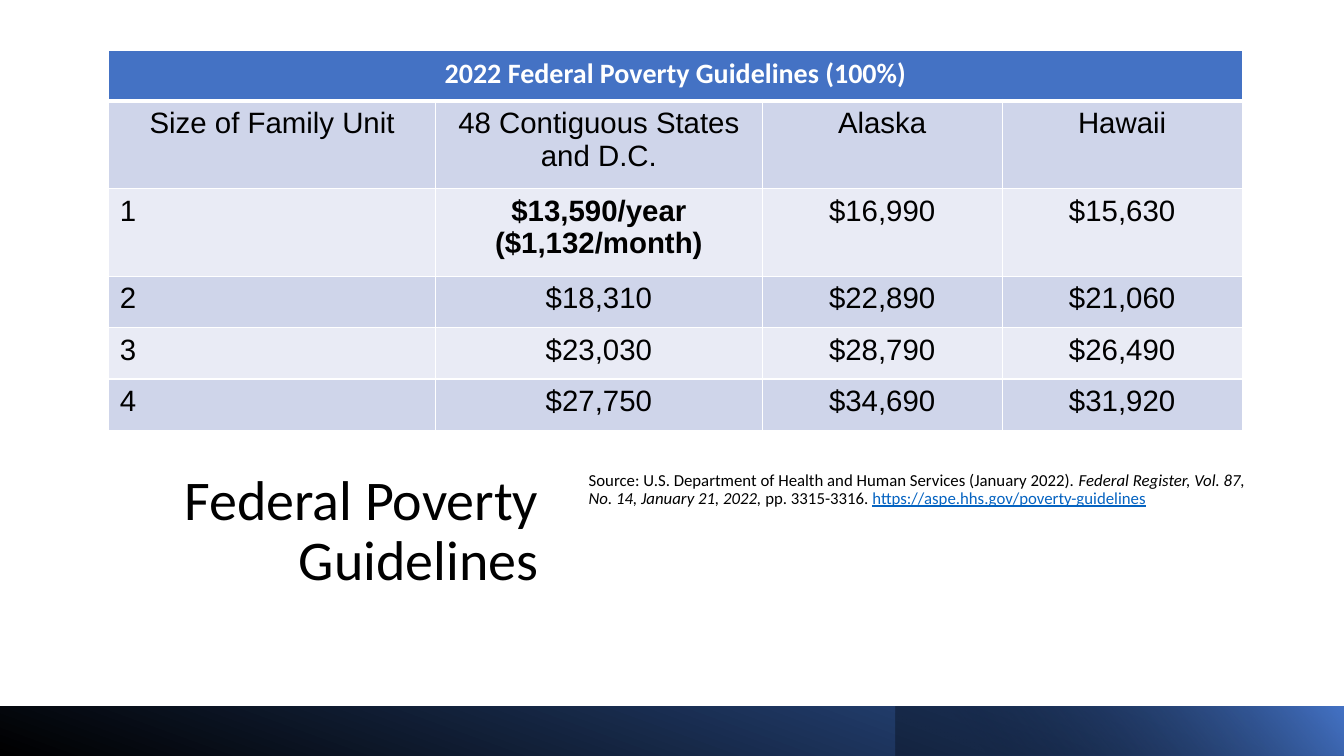
from pptx import Presentation
from pptx.util import Inches, Pt
from pptx.dml.color import RGBColor
from pptx.enum import shapes, text
from pptx.oxml import parse_xml
from pptx.oxml.ns import nsdecls, qn
from lxml import etree


def rgb(value):
    return RGBColor.from_string(value)


def style(p, size, font, color, align=text.PP_ALIGN.LEFT, bold=False):
    p.alignment = align
    p.font.size, p.font.name, p.font.bold = Pt(size), font, bold
    p.font.color.rgb = rgb(color)


prs = Presentation()
prs.slide_width, prs.slide_height = Inches(13.33), Inches(7.5)
s = prs.slides.add_slide(prs.slide_layouts[5])

# Title
title = s.shapes.title
title.left, title.top = Inches(0.9), Inches(4.63)
title.width, title.height = Inches(4.54), Inches(1.97)
tf = title.text_frame
tf.text = "Federal Poverty Guidelines"
tf.word_wrap = True
tf.vertical_anchor = text.MSO_ANCHOR.TOP
p = tf.paragraphs[0]
style(p, 40, "Calibri", "000000", text.PP_ALIGN.RIGHT)
p.line_spacing = 0.9

# Source note
tf = s.shapes.add_textbox(Inches(5.74), Inches(4.63), Inches(6.82), Inches(1.97)).text_frame
tf.word_wrap = True
p = tf.paragraphs[0]
style(p, 12, "Calibri", "000000")
p.line_spacing, p.space_after = 0.9, Pt(6)
for part, italic in [
    ("Source: U.S. Department of Health and Human Services (January 2022). ", False),
    ("Federal Register, Vol. 87, No. 14, January 21, 2022, ", True),
    ("pp. 3315-3316. ", False),
    ("https://aspe.hhs.gov/poverty-guidelines", False),
]:
    r = p.add_run()
    r.text, r.font.italic = part, italic
r.font.underline = True
r.font.color.rgb = rgb("0563C1")

# Bottom gradient bands: left, width, angle, stops (position, colour, opacity %)
for left, width, angle, stops in [
    (0, 13.33, 70, [(0, "000000", 100), (1, "2F5597", 100)]),
    (8.88, 4.45, 40, [(0.19, "000000", 31), (0.99, "4472C4", 100)]),
]:
    sp = s.shapes.add_shape(shapes.MSO_SHAPE.RECTANGLE,
                            Inches(left), Inches(7.01), Inches(width), Inches(0.49))
    sp.shadow.inherit = False
    sp.line.fill.background()
    sp.fill.gradient()
    sp.fill.gradient_angle = angle
    for stop, (position, color, opacity) in zip(sp.fill.gradient_stops, stops):
        stop.position = position
        stop.color.rgb = rgb(color)
    for clr, (position, color, opacity) in zip(sp._element.spPr.iter(qn("a:srgbClr")), stops):
        if opacity < 100:
            etree.SubElement(clr, qn("a:alpha"), val=str(opacity * 1000))

# Guidelines table
rows = [
    ["2022 Federal Poverty Guidelines (100%)", "", "", ""],
    ["Size of Family Unit", "48 Contiguous States and D.C.", "Alaska", "Hawaii"],
    ["1", "$13,590/year\n($1,132/month)", "$16,990", "$15,630"],
    ["2", "$18,310", "$22,890", "$21,060"],
    ["3", "$23,030", "$28,790", "$26,490"],
    ["4", "$27,750", "$34,690", "$31,920"],
]
table = s.shapes.add_table(len(rows), 4, Inches(1.08), Inches(0.5),
                           Inches(11.24), Inches(3.77)).table
for col, width in zip(table.columns, [3.24, 3.24, 2.38, 2.38]):
    col.width = Inches(width)
for row, height in zip(table.rows, [0.5, 0.87, 0.87, 0.51, 0.51, 0.51]):
    row.height = Inches(height)
table.cell(0, 0).merge(table.cell(0, 3))

for i, values in enumerate(rows):
    for j, value in enumerate(values):
        cell = table.cell(i, j)
        cell.margin_left = cell.margin_right = Inches(0.11)
        cell.margin_top = cell.margin_bottom = Inches(0.06)
        # White cell borders, thicker between the heading and the body
        for side in "LRTB":
            thick = (i, side) in [(0, "B"), (1, "T")]
            cell._tc.get_or_add_tcPr().append(parse_xml(
                f'<a:ln{side} {nsdecls("a")} w="{Pt(3 if thick else 1)}"><a:solidFill>'
                f'<a:srgbClr val="FFFFFF"/></a:solidFill></a:ln{side}>'))
        cell.fill.solid()
        cell.fill.fore_color.rgb = rgb("4472C4" if i == 0 else "CFD5EA" if i % 2 else "E9EBF5")
        if not value:
            continue
        cell.text = value
        left_aligned = i > 1 and j == 0
        for p in cell.text_frame.paragraphs:
            if i == 0:
                style(p, 20, "Calibri", "FFFFFF", text.PP_ALIGN.CENTER, True)
            else:
                style(p, 21, "Arial", "000000",
                      text.PP_ALIGN.LEFT if left_aligned else text.PP_ALIGN.CENTER,
                      (i, j) == (2, 1))

prs.save("out.pptx")
